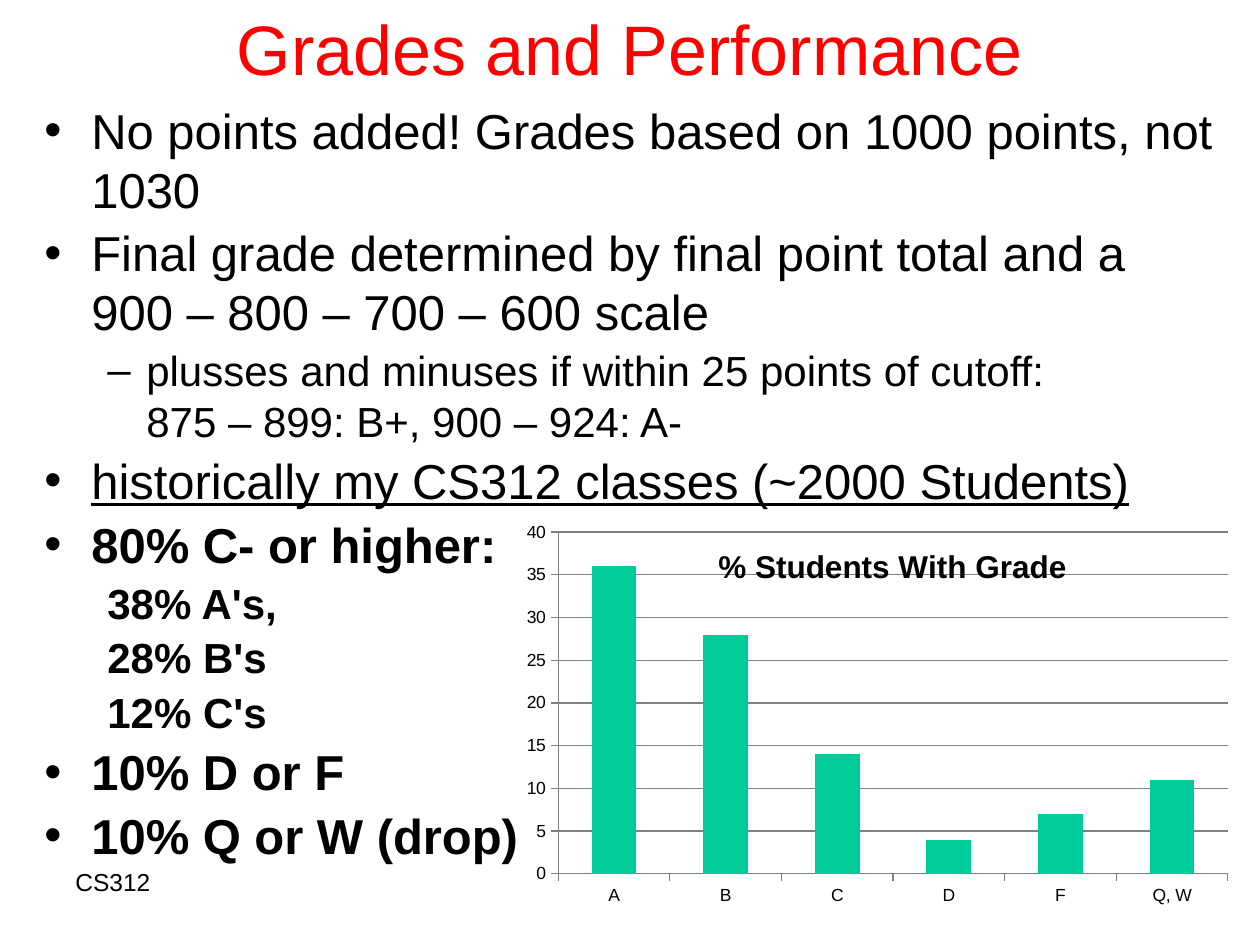
from lxml import etree
from pptx import Presentation
from pptx.chart.data import CategoryChartData
from pptx.dml.color import RGBColor
from pptx.enum.chart import XL_CHART_TYPE, XL_TICK_MARK
from pptx.enum.text import MSO_ANCHOR, PP_ALIGN
from pptx.oxml import parse_xml
from pptx.oxml.ns import nsdecls, qn
from pptx.util import Pt

COLUMN_CLUSTERED = XL_CHART_TYPE.COLUMN_CLUSTERED
TICK_OUTSIDE = XL_TICK_MARK.OUTSIDE
TOP, MIDDLE = MSO_ANCHOR.TOP, MSO_ANCHOR.MIDDLE
LEFT, CENTER = PP_ALIGN.LEFT, PP_ALIGN.CENTER

RED = RGBColor(0xFF, 0x00, 0x00)
BLACK = RGBColor(0x00, 0x00, 0x00)
GREEN = RGBColor(0x00, 0xCC, 0x99)
GRAY = RGBColor(0x80, 0x80, 0x80)

EMU_PER_PX = 914400 / 126
BLANK_LAYOUT = 6


def px(length):
    return round(length * EMU_PER_PX)


class SlideBuilder:
    font_name = "Arial"

    def __init__(self, presentation):
        self.slide = presentation.slides.add_slide(presentation.slide_layouts[BLANK_LAYOUT])

    def style_font(self, font, size, color=BLACK, bold=False, underline=False):
        font.name = self.font_name
        font.size = Pt(size)
        font.color.rgb = color
        font.bold = bold
        font.underline = underline

    def text_box(self, left, top, width, height, anchor=TOP):
        shape = self.slide.shapes.add_textbox(px(left), px(top), px(width), px(height))
        frame = shape.text_frame
        frame.word_wrap = True
        frame.vertical_anchor = anchor
        return frame

    def add_text(self, paragraph, text, size, color=BLACK, alignment=LEFT, **style):
        paragraph.alignment = alignment
        for index, line in enumerate(text.split("\n")):
            if index:
                paragraph.add_line_break()
            run = paragraph.add_run()
            run.text = line
            self.style_font(run.font, size, color, **style)

    def label(self, box, text, size, color=BLACK, alignment=LEFT, anchor=TOP):
        frame = self.text_box(*box, anchor=anchor)
        self.add_text(frame.paragraphs[0], text, size, color, alignment)

    def outline(self, box, items):
        frame = self.text_box(*box)
        for index, (text, (size, margin, hanging, bullet), style) in enumerate(items):
            paragraph = frame.add_paragraph() if index else frame.paragraphs[0]
            self.add_text(paragraph, text, size, **style)
            paragraph.space_before = Pt(size / 10)
            properties = paragraph._p.get_or_add_pPr()
            properties.set("marL", str(px(margin)))
            properties.set("indent", str(-px(hanging)))
            if bullet:
                etree.SubElement(properties, qn("a:buFont")).set("typeface", self.font_name)
                etree.SubElement(properties, qn("a:buChar")).set("char", bullet)
            else:
                etree.SubElement(properties, qn("a:buNone"))

    def place(self, parent, position, **values):
        """Give a chart part a manual layout in fractions of the chart."""
        for old in parent.findall(qn("c:layout")):
            parent.remove(old)
        settings = "".join(f'<c:{name} val="{value}"/>' for name, value in values.items())
        parent.insert(position, parse_xml(
            f'<c:layout {nsdecls("c")}><c:manualLayout>{settings}</c:manualLayout></c:layout>'))

    def column_chart(self, box, title, categories, values):
        data = CategoryChartData()
        data.categories = categories
        data.add_series("Series 1", values)
        chart = self.slide.shapes.add_chart(
            COLUMN_CLUSTERED, *(px(length) for length in box), data).chart
        self.style_font(chart.font, 10)
        chart.has_legend = False

        # Title over the plot
        chart.has_title = True
        run = chart.chart_title.text_frame.paragraphs[0].add_run()
        run.text = title
        self.style_font(run.font, 18, bold=True)
        chart.chart_title.include_in_layout = True
        self.place(chart.chart_title._element, 1,
                   xMode="edge", yMode="edge", x=0.27, y=0.09)
        self.place(chart._chartSpace.chart.plotArea, 0, layoutTarget="inner",
                   xMode="edge", yMode="edge", x=0.06, y=0.07, w=0.91, h=0.85)

        # Columns
        plot = chart.plots[0]
        plot.gap_width = 150
        plot.vary_by_categories = False
        fill = plot.series[0].format.fill
        fill.solid()
        fill.fore_color.rgb = GREEN

        # Axes
        value_axis = chart.value_axis
        value_axis.minimum_scale = 0
        value_axis.maximum_scale = 40
        value_axis.major_unit = 5
        value_axis.has_major_gridlines = True
        value_axis.major_gridlines.format.line.color.rgb = GRAY
        for axis in (chart.category_axis, value_axis):
            axis.major_tick_mark = TICK_OUTSIDE
            axis.format.line.color.rgb = GRAY


# Outline levels: size, margin, hanging indent, bullet
POINT = (28, 47, 47, "•")
DETAIL = (24, 102, 39, "–")
SHARE = (24, 63, 0, None)
BOLD = {"bold": True}

GRADING_POINTS = [
    ("No points added! Grades based on 1000 points, not 1030", POINT, {}),
    ("Final grade determined by final point total and a 900 – 800 – 700 – 600 scale", POINT, {}),
    ("plusses and minuses if within 25 points of cutoff:\n875 – 899: B+, 900 – 924: A-",
     DETAIL, {}),
    ("historically my CS312 classes (~2000 Students)", POINT, {"underline": True}),
    ("80% C- or higher:", POINT, BOLD),
    ("38% A's,", SHARE, BOLD),
    ("28% B's", SHARE, BOLD),
    ("12% C's", SHARE, BOLD),
    ("10% D or F", POINT, BOLD),
    ("10% Q or W (drop)", POINT, BOLD),
]


def main():
    presentation = Presentation()
    presentation.slide_width = px(1260)
    presentation.slide_height = px(945)
    builder = SlideBuilder(presentation)

    # Title, outline and footer
    builder.label((94, -32, 1071, 158), "Grades and Performance", 40, RED, CENTER, MIDDLE)
    builder.outline((32, 94, 1197, 725), GRADING_POINTS)
    builder.label((63, 861, 546, 63), "CS312", 14)

    # Grade distribution
    builder.column_chart((514, 504, 736, 402), "% Students With Grade",
                         ["A", "B", "C", "D", "F", "Q, W"], [36, 28, 14, 4, 7, 11])

    presentation.save("out.pptx")


if __name__ == "__main__":
    main()
